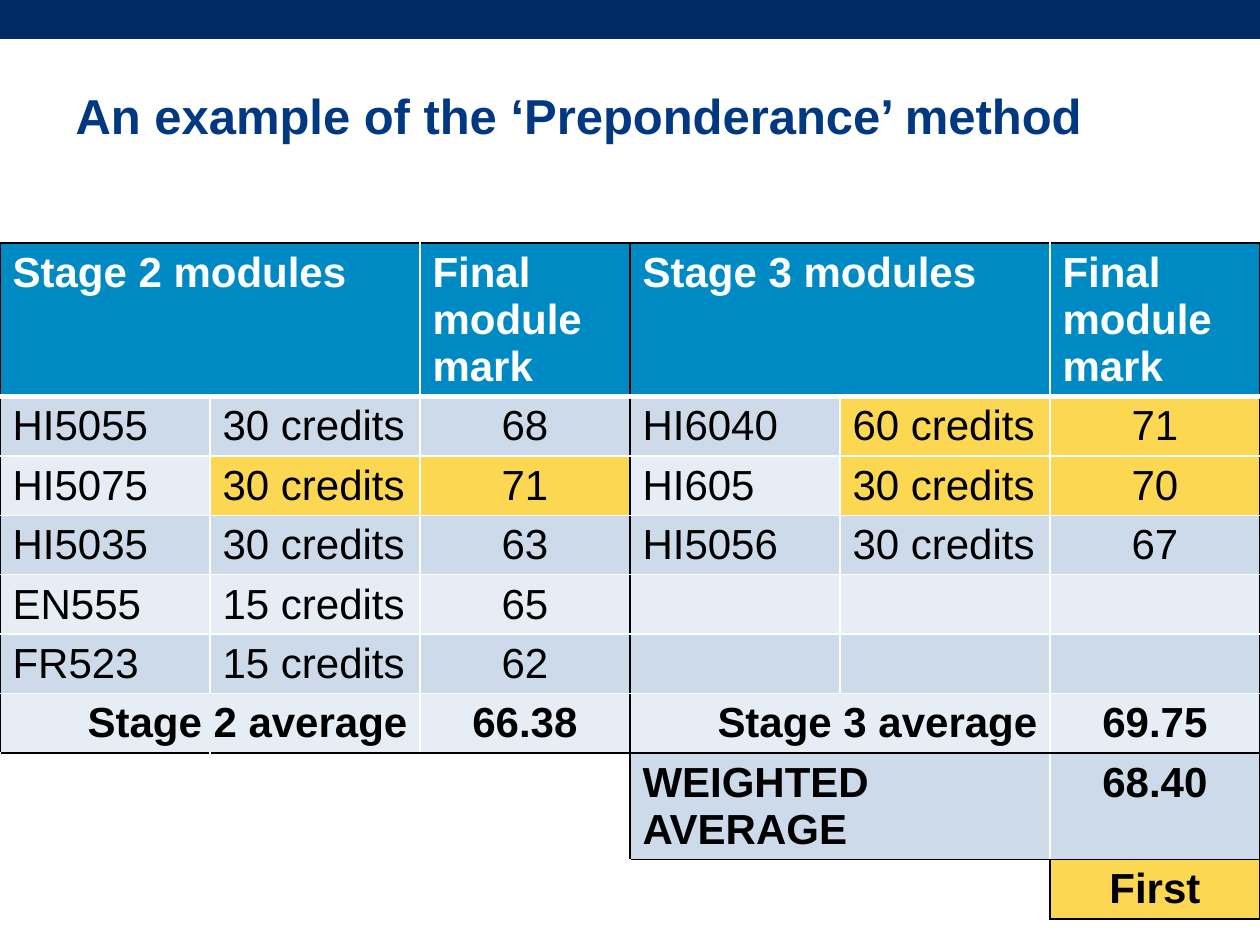
from pptx import Presentation
from pptx import util as u
from pptx.dml.color import RGBColor
from pptx.enum import shapes, text
from pptx.oxml import parse_xml
from pptx.oxml.ns import nsdecls

COLORS = {
    "navy": "002A62", "title": "003882", "head": "008AC4",
    "dark": "CCDAEA", "light": "E7EDF5", "gold": "FCD852",
    "white": "FFFFFF", "black": "000000",
}
MARKS = [
    ["Stage 2 modules", "", "Final module mark", "Stage 3 modules", "", "Final module mark"],
    ["HI5055", "30 credits", "68", "HI6040", "60 credits", "71"],
    ["HI5075", "30 credits", "71", "HI605", "30 credits", "70"],
    ["HI5035", "30 credits", "63", "HI5056", "30 credits", "67"],
    ["EN555", "15 credits", "65", "", "", ""],
    ["FR523", "15 credits", "62", "", "", ""],
    ["Stage 2 average", "", "66.38", "Stage 3 average", "", "69.75"],
    ["", "", "", "WEIGHTED AVERAGE", "", "68.40"],
    ["", "", "", "", "", "First"],
]
HEIGHTS = [1.21] + [0.47] * 6 + [0.84, 0.47]
SPANS = [(0, 0), (0, 3), (6, 0), (6, 3), (7, 3), (8, 3)]
GOLD = {(1, 4), (1, 5), (2, 1), (2, 2), (2, 4), (2, 5), (8, 5)}


def fill_name(row, col):
    if (row, col) in GOLD:
        return "gold"
    if row == 8 or (row == 7 and col < 3):
        return None
    if row == 0:
        return "head"
    return "dark" if row % 2 else "light"


def side_edge(row, x):
    """Colour and width of the vertical edge x beside a row."""
    black = {7: (3, 6), 8: (5, 6)}.get(row, (0, 3, 6))
    return ("black" if x in black else "white"), 1


def flat_edge(y, col):
    """Colour and width of the horizontal edge y across a column."""
    if y == 1:
        return "white", 3
    black = y in (0, 7) or (y == 8 and col >= 3) or (y == 9 and col == 5)
    return ("black" if black else "white"), 1


class Deck:
    font = "Arial"

    def __init__(self):
        self.prs = Presentation()
        self.prs.slide_width = u.Inches(10)
        self.prs.slide_height = u.Inches(7.5)
        self.slide = self.prs.slides.add_slide(self.prs.slide_layouts[5])

    def color(self, name):
        return RGBColor.from_string(COLORS[name])

    def style(self, para, size, color, bold, align):
        para.alignment = align
        for run in para.runs:
            run.font.name = self.font
            run.font.size = u.Pt(size)
            run.font.bold = bold
            run.font.color.rgb = self.color(color)

    def bar(self, left, top, width, height, color):
        box = self.slide.shapes.add_shape(
            shapes.MSO_SHAPE.RECTANGLE, *map(u.Inches, (left, top, width, height)))
        box.shadow.inherit = False
        box.fill.solid()
        box.fill.fore_color.rgb = self.color(color)
        box.line.fill.background()

    def title(self, words, left, top, width, height):
        box = self.slide.shapes.title
        box.left, box.top, box.width, box.height = map(
            u.Inches, (left, top, width, height))
        frame = box.text_frame
        frame.text = words
        frame.vertical_anchor = text.MSO_ANCHOR.MIDDLE
        self.style(frame.paragraphs[0], 28, "title", True, text.PP_ALIGN.LEFT)

    def edges(self, cell, row, col):
        lines = {
            "lnL": side_edge(row, col), "lnR": side_edge(row, col + 1),
            "lnT": flat_edge(row, col), "lnB": flat_edge(row + 1, col),
        }
        props = cell._tc.get_or_add_tcPr()
        for place, (tag, (color, width)) in enumerate(lines.items()):
            props.insert(place, parse_xml(
                f'<a:{tag} {nsdecls("a")} w="{u.Pt(width)}"><a:solidFill>'
                f'<a:srgbClr val="{COLORS[color]}"/></a:solidFill></a:{tag}>'))

    def cell(self, cell, words, row, col):
        fill = fill_name(row, col)
        if fill:
            cell.fill.solid()
            cell.fill.fore_color.rgb = self.color(fill)
        else:
            cell.fill.background()
        self.edges(cell, row, col)
        if not words:
            return
        cell.text_frame.text = words
        align = text.PP_ALIGN.LEFT
        if row and col in (2, 5):
            align = text.PP_ALIGN.CENTER
        elif row == 6:
            align = text.PP_ALIGN.RIGHT
        self.style(cell.text_frame.paragraphs[0], 24,
                   "black" if row else "white", row in (0, 6, 7, 8), align)

    def table(self, rows, heights, left, top, width):
        count = len(rows[0])
        grid = self.slide.shapes.add_table(
            len(rows), count, *map(u.Inches, (left, top, width, sum(heights)))).table
        grid.horz_banding = False
        for col in grid.columns:
            col.width = u.Inches(width / count)
        for row, high in zip(grid.rows, heights):
            row.height = u.Inches(high)
        for row, col in SPANS:
            grid.cell(row, col).merge(grid.cell(row, col + 1))
        for r, row in enumerate(rows):
            for c, words in enumerate(row):
                self.cell(grid.cell(r, c), words, r, c)


def main():
    deck = Deck()
    deck.bar(0, 0, 10, 0.31, "navy")
    deck.title("An example of the ‘Preponderance’ method", 0.5, 0.6, 9.07, 0.63)
    deck.table(MARKS, HEIGHTS, 0, 1.93, 10)
    deck.prs.save("out.pptx")


if __name__ == "__main__":
    main()
